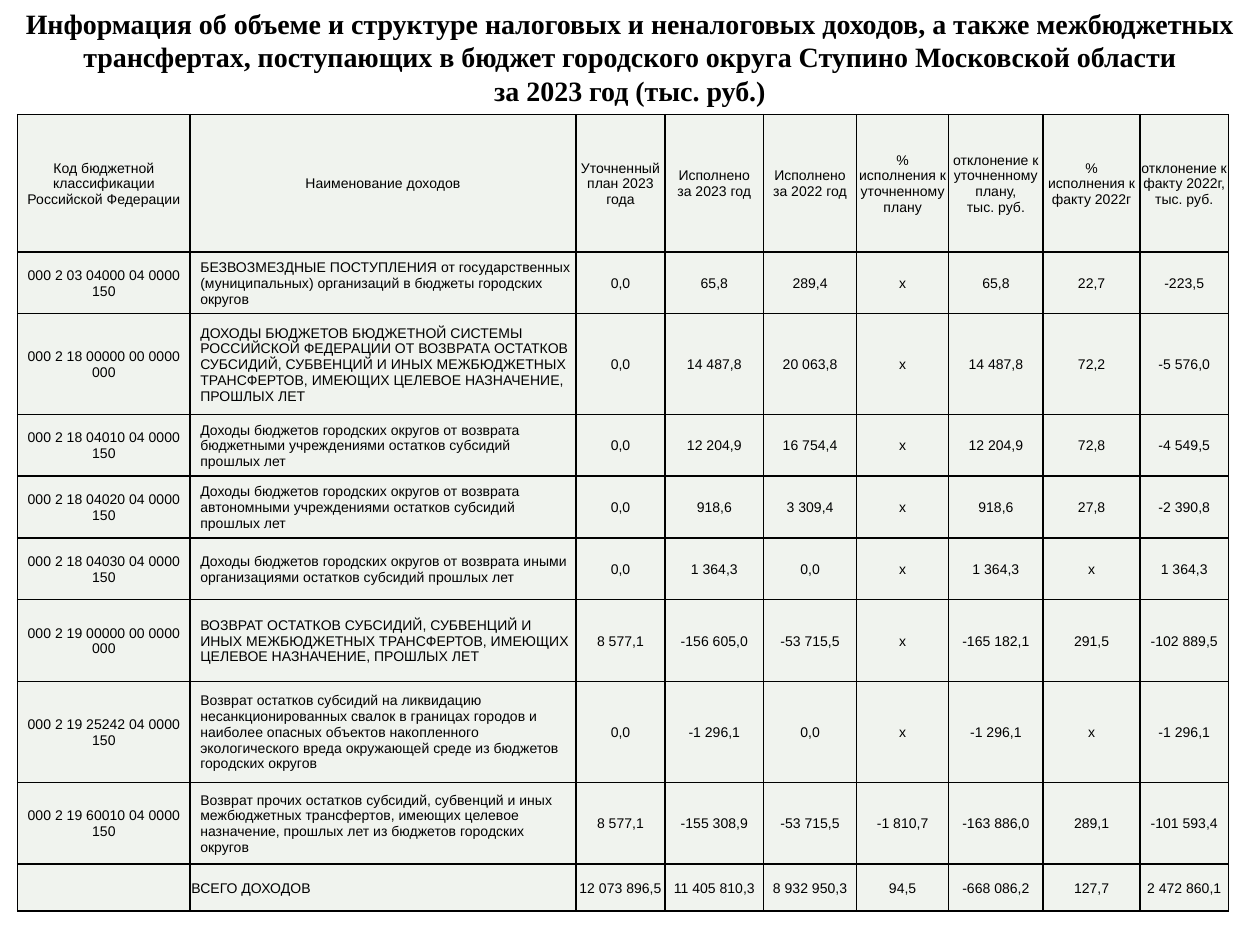
"""Build the slide with the 2023 budget revenue table of the Stupino urban district."""
from dataclasses import dataclass

from lxml.etree import SubElement
from pptx import Presentation
from pptx.dml.color import RGBColor
from pptx.enum.text import MSO_ANCHOR, PP_ALIGN
from pptx.oxml.ns import qn
from pptx.util import Inches, Pt


@dataclass(frozen=True)
class Theme:
    ink: str = "000000"
    cell: str = "F0F3EE"
    title_font: str = "Times New Roman"
    table_font: str = "Arial"
    title_size: float = 16
    table_size: float = 8
    border: float = 1


theme = Theme()


def write_paragraph(para, text, *, font, size, bold=False, align=PP_ALIGN.CENTER):
    para.alignment = align
    for index, line in enumerate(text.split("\n")):
        if index:
            para.add_line_break()
            line_break = para._p.findall(qn("a:br"))[-1]
            SubElement(line_break, qn("a:rPr"), sz=str(int(size * 100)))
        span = para.add_run()
        span.text = line
        span.font.name = font
        span.font.size = Pt(size)
        span.font.bold = bold
        span.font.color.rgb = RGBColor.from_string(theme.ink)


def style_cell(cell, left_margin):
    cell.vertical_anchor = MSO_ANCHOR.MIDDLE
    cell.margin_left = Inches(left_margin)
    cell.margin_top = cell.margin_right = Inches(0.01)
    cell.margin_bottom = Inches(0)
    properties = cell._tc.get_or_add_tcPr()
    for side in ("a:lnL", "a:lnR", "a:lnT", "a:lnB"):
        line = SubElement(properties, qn(side), w=str(Pt(theme.border)))
        fill = SubElement(line, qn("a:solidFill"))
        SubElement(fill, qn("a:srgbClr"), val=theme.ink)
    cell.fill.solid()
    cell.fill.fore_color.rgb = RGBColor.from_string(theme.cell)


title_lines = [
    "Информация об объеме и структуре налоговых и неналоговых доходов, а также межбюджетных "
    "трансфертах, поступающих в бюджет городского округа Ступино Московской области",
    "за 2023 год (тыс. руб.)",
]
column_widths = [1.37, 3.06, 0.71, 0.78, 0.74, 0.73, 0.75, 0.77, 0.7]
row_heights = [1.09, 0.49, 0.8, 0.49, 0.49, 0.49, 0.65, 0.8, 0.65, 0.37]
table_rows = [
    ["Код бюджетной классификации Российской Федерации", "Наименование доходов",
     "Уточненный план 2023 года", "Исполнено\nза 2023 год", "Исполнено\nза 2022 год",
     "%\nисполнения к уточненному плану", "отклонение к уточненному плану,\nтыс. руб.",
     "%\nисполнения к факту 2022г", "отклонение к факту 2022г,\nтыс. руб."],
    ["000 2 03 04000 04 0000 150",
     "БЕЗВОЗМЕЗДНЫЕ ПОСТУПЛЕНИЯ от государственных (муниципальных) организаций "
     "в бюджеты городских округов",
     "0,0", "65,8", "289,4", "х", "65,8", "22,7", "-223,5"],
    ["000 2 18 00000 00 0000 000",
     "ДОХОДЫ БЮДЖЕТОВ БЮДЖЕТНОЙ СИСТЕМЫ РОССИЙСКОЙ ФЕДЕРАЦИИ ОТ ВОЗВРАТА ОСТАТКОВ "
     "СУБСИДИЙ, СУБВЕНЦИЙ И ИНЫХ МЕЖБЮДЖЕТНЫХ ТРАНСФЕРТОВ, ИМЕЮЩИХ ЦЕЛЕВОЕ НАЗНАЧЕНИЕ, "
     "ПРОШЛЫХ ЛЕТ",
     "0,0", "14 487,8", "20 063,8", "х", "14 487,8", "72,2", "-5 576,0"],
    ["000 2 18 04010 04 0000 150",
     "Доходы бюджетов городских округов от возврата бюджетными учреждениями остатков "
     "субсидий прошлых лет",
     "0,0", "12 204,9", "16 754,4", "х", "12 204,9", "72,8", "-4 549,5"],
    ["000 2 18 04020 04 0000 150",
     "Доходы бюджетов городских округов от возврата автономными учреждениями остатков "
     "субсидий прошлых лет",
     "0,0", "918,6", "3 309,4", "х", "918,6", "27,8", "-2 390,8"],
    ["000 2 18 04030 04 0000 150",
     "Доходы бюджетов городских округов от возврата иными организациями остатков "
     "субсидий прошлых лет",
     "0,0", "1 364,3", "0,0", "х", "1 364,3", "х", "1 364,3"],
    ["000 2 19 00000 00 0000 000",
     "ВОЗВРАТ ОСТАТКОВ СУБСИДИЙ, СУБВЕНЦИЙ И ИНЫХ МЕЖБЮДЖЕТНЫХ ТРАНСФЕРТОВ, ИМЕЮЩИХ "
     "ЦЕЛЕВОЕ НАЗНАЧЕНИЕ, ПРОШЛЫХ ЛЕТ",
     "8 577,1", "-156 605,0", "-53 715,5", "х", "-165 182,1", "291,5", "-102 889,5"],
    ["000 2 19 25242 04 0000 150",
     "Возврат остатков субсидий на ликвидацию несанкционированных свалок в границах "
     "городов и наиболее опасных объектов накопленного экологического вреда окружающей "
     "среде из бюджетов городских округов",
     "0,0", "-1 296,1", "0,0", "х", "-1 296,1", "х", "-1 296,1"],
    ["000 2 19 60010 04 0000 150",
     "Возврат прочих остатков субсидий, субвенций и иных межбюджетных трансфертов, "
     "имеющих целевое назначение, прошлых лет из бюджетов городских округов",
     "8 577,1", "-155 308,9", "-53 715,5", "-1 810,7", "-163 886,0", "289,1", "-101 593,4"],
    ["", "ВСЕГО ДОХОДОВ", "12 073 896,5", "11 405 810,3", "8 932 950,3", "94,5",
     "-668 086,2", "127,7", "2 472 860,1"],
]

deck = Presentation()
deck.slide_width, deck.slide_height = Inches(10), Inches(7.5)
page = deck.slides.add_slide(deck.slide_layouts.get_by_name("Title Only"))

title = page.shapes.title
title.left, title.top = Inches(0), Inches(0)
title.width, title.height = Inches(10), Inches(0.91)
title_frame = title.text_frame
title_frame.word_wrap = True
title_frame.vertical_anchor = MSO_ANCHOR.TOP
for index, line in enumerate(title_lines):
    para = title_frame.add_paragraph() if index else title_frame.paragraphs[0]
    write_paragraph(para, line, font=theme.title_font, size=theme.title_size, bold=True)

table_frame = page.shapes.add_table(
    len(table_rows), len(column_widths), Inches(0.14), Inches(0.91),
    Inches(sum(column_widths)), Inches(sum(row_heights)))
table = table_frame.table
for column, width in zip(table.columns, column_widths):
    column.width = Inches(width)
for row, height in zip(table.rows, row_heights):
    row.height = Inches(height)

last_row = len(table_rows) - 1
for row_index, row_texts in enumerate(table_rows):
    for column_index, text in enumerate(row_texts):
        is_name = column_index == 1 and row_index > 0
        cell = table.cell(row_index, column_index)
        style_cell(cell, 0.08 if is_name and row_index < last_row else 0.01)
        write_paragraph(cell.text_frame.paragraphs[0], text, font=theme.table_font,
                        size=theme.table_size,
                        align=PP_ALIGN.LEFT if is_name else PP_ALIGN.CENTER)

deck.save("out.pptx")
